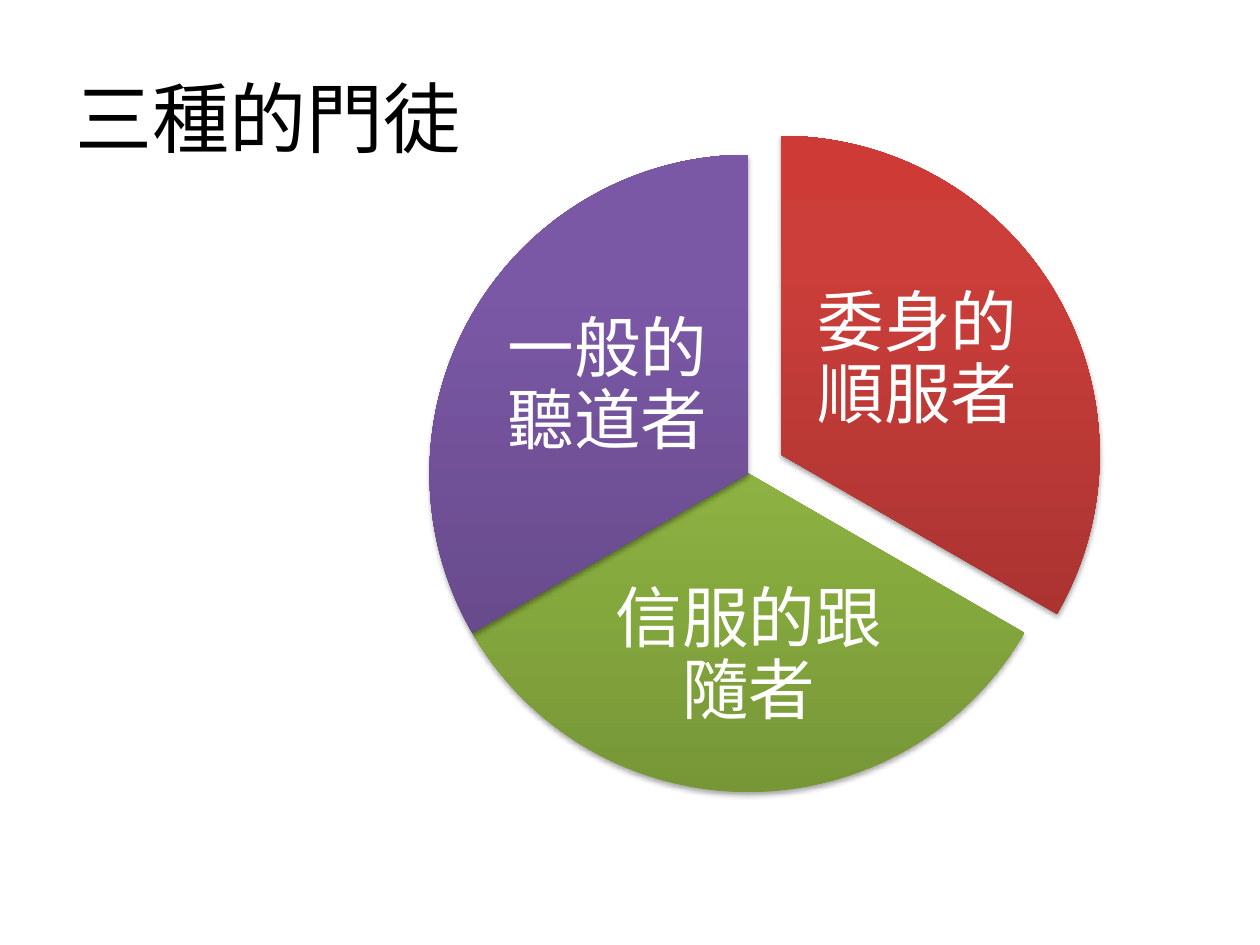
from copy import deepcopy

from lxml.etree import SubElement
from pptx import Presentation
from pptx.dml.color import RGBColor
from pptx.enum.shapes import MSO_SHAPE
from pptx.enum.text import MSO_ANCHOR, PP_ALIGN
from pptx.oxml.ns import qn
from pptx.util import Cm, Pt

TITLE = "三種的門徒"
DIAMETER = 12.85
CENTRE = (8.66, 3.12)
PULLED_OUT = (9.32, 2.74)
STOPS = (0, 0.8, 1)
SLICES = [
    ("委身的順服者", PULLED_OUT, (162, 18), ("9C2F2D", "CB3E3A", "CE3B37"), (16.31, 5.13, 4.37, 4.29)),
    ("信服的跟隨者", CENTRE, (18, 90), ("779737", "9BC348", "9DC746"), (12.19, 11.25, 5.82, 3.99)),
    ("一般的聽道者", CENTRE, (90, 162), ("5F4480", "7B58A6", "7C57A8"), (10.06, 5.66, 4.37, 4.29)),
]


def color(value):
    return RGBColor.from_string(value)


def add_text(page, text, place, size, value, align, inset):
    box = page.shapes.add_textbox(*map(Cm, place))
    frame = box.text_frame
    frame.word_wrap = True
    frame.vertical_anchor = MSO_ANCHOR.MIDDLE
    frame.margin_left = frame.margin_right = Cm(inset)
    frame.margin_top = frame.margin_bottom = Cm(0.13)
    para = frame.paragraphs[0]
    para.text = text
    para.alignment = align
    para.font.name = "Arial"
    para.font.size = Pt(size)
    para.font.color.rgb = color(value)
    return para


def fill_gradient(shape, colors):
    shape.fill.gradient()
    shape.fill.gradient_angle = 90
    stop_list = shape.fill._fill._gradFill.find(qn("a:gsLst"))
    stop_list.append(deepcopy(stop_list[-1]))
    for stop, position, value in zip(shape.fill.gradient_stops, STOPS, colors):
        stop.position = position
        stop.color.rgb = color(value)


def add_shadow(shape):
    shape.shadow.inherit = False
    effects = shape._element.spPr.find(qn("a:effectLst"))
    shadow = SubElement(effects, qn("a:outerShdw"), blurRad=str(Pt(3.1)),
                        dist=str(Pt(1.8)), dir="5400000", rotWithShape="0")
    black = SubElement(shadow, qn("a:srgbClr"), val="000000")
    SubElement(black, qn("a:alpha"), val="35000")


def add_slice(page, corner, angles, colors):
    pie = page.shapes.add_shape(MSO_SHAPE.PIE, *map(Cm, (*corner, DIAMETER, DIAMETER)))
    for index, angle in enumerate(angles):
        pie.adjustments[index] = angle
    fill_gradient(pie, colors)
    pie.line.fill.background()
    add_shadow(pie)


def main():
    deck = Presentation()
    deck.slide_width, deck.slide_height = Cm(25.4), Cm(19.05)
    page = deck.slides.add_slide(deck.slide_layouts[6])
    add_text(page, TITLE, (1.27, 0.76, 8.66, 3.18), 44, "000000", PP_ALIGN.LEFT, 0.25)
    for label, corner, angles, colors, place in SLICES:
        add_slice(page, corner, angles, colors)
        para = add_text(page, label, place, 38, "FFFFFF", PP_ALIGN.CENTER, 0.13)
        para.line_spacing = 0.9
    deck.save("out.pptx")


if __name__ == "__main__":
    main()
